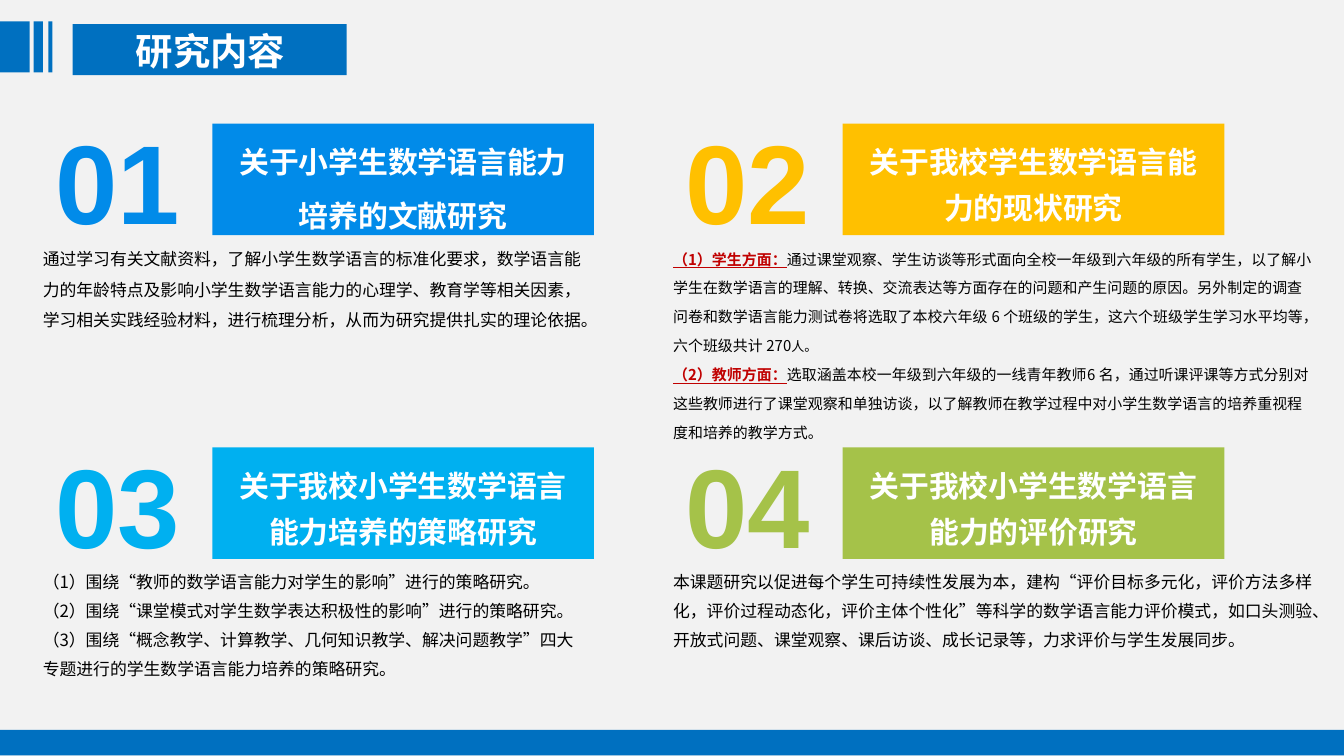
"""Build the slide on the four parts of the research content."""
import dataclasses
import typing

import lxml.etree
import pptx
import pptx.dml.color
import pptx.enum.shapes
import pptx.enum.text
import pptx.oxml.ns
import pptx.util

Inches = pptx.util.Inches
Pt = pptx.util.Pt
Align = pptx.enum.text.PP_ALIGN
Anchor = pptx.enum.text.MSO_ANCHOR

COLOURS = {
    "page": "F2F2F2", "theme": "0070C0", "white": "FFFFFF", "black": "000000",
    "label": "C00000", "blue": "018BE9", "gold": "FFC000", "sky": "00B0F0", "green": "A5C249",
}
CHINESE = "Noto Sans CJK SC"
COLUMNS = (0.22, 4.91)
ROWS = (0.73, 3.14)


@dataclasses.dataclass(frozen=True)
class Area:
    left: float
    top: float
    width: float
    height: float

    def lengths(self) -> tuple:
        return tuple(Inches(n) for n in (self.left, self.top, self.width, self.height))


@dataclasses.dataclass(frozen=True)
class Style:
    size: float
    colour: str = "black"
    bold: bool = False
    underline: bool = False
    font: str = CHINESE


@dataclasses.dataclass(frozen=True)
class Span:
    text: str
    style: Style


@dataclasses.dataclass(frozen=True)
class Topic:
    colour: str
    heading: tuple[str, ...]
    heading_spacing: float
    body: tuple[tuple[Span, ...], ...]
    body_width: float
    body_height: float = 0.97
    body_spacing: typing.Any = Pt(15.5)


BODY = Style(9)
DETAIL = Style(8)
LABEL = Style(8, "label", bold=True, underline=True)
HEADING = Style(16, "white", bold=True)

TOPICS = (
    Topic("blue", ("关于小学生数学语言能力", "培养的文献研究"), 1.5, (
        (Span("通过学习有关文献资料，了解小学生数学语言的标准化要求，数学语言能力的年龄特点及影响小学生数学语言能力的心理学、教育学等相关因素，学习相关实践经验材料，进行梳理分析，从而为研究提供扎实的理论依据。", BODY),),
    ), 4.2, body_spacing=1.5),
    Topic("gold", ("关于我校学生数学语言能力的现状研究",), 1.3, (
        (Span("（1）学生方面：", LABEL),
         Span("通过课堂观察、学生访谈等形式面向全校一年级到六年级的所有学生，以了解小学生在数学语言的理解、转换、交流表达等方面存在的问题和产生问题的原因。另外制定的调查问卷和数学语言能力测试卷将选取了本校六年级 6 个班级的学生，这六个班级学生学习水平均等，六个班级共计 270", DETAIL),
         Span("人。", Style(7))),
        (Span("（2）教师方面：", LABEL),
         Span("选取涵盖本校一年级到六年级的一线青年教师6 名，通过听课评课等方式分别对这些教师进行了课堂观察和单独访谈，以了解教师在教学过程中对小学生数学语言的培养重视程度和培养的教学方式。", DETAIL)),
    ), 4.97, 1.6),
    Topic("sky", ("关于我校小学生数学语言能力培养的策略研究",), 1.3, (
        (Span("（1）围绕“教师的数学语言能力对学生的影响”进行的策略研究。", BODY),),
        (Span("（2）围绕“课堂模式对学生数学表达积极性的影响”进行的策略研究。", BODY),),
        (Span("（3）围绕“概念教学、计算教学、几何知识教学、解决问题教学”四大专题进行的学生数学语言能力培养的策略研究。", BODY),),
    ), 4.2),
    Topic("green", ("关于我校小学生数学语言能力的评价研究",), 1.3, (
        (Span("本课题研究以促进每个学生可持续性发展为本，建构“评价目标多元化，评价方法多样化，评价过程动态化，评价主体个性化”等科学的数学语言能力评价模式，如口头测验、开放式问题、课堂观察、课后访谈、成长记录等，力求评价与学生发展同步。", BODY),),
    ), 4.98),
)


def rgb(colour: str) -> pptx.dml.color.RGBColor:
    return pptx.dml.color.RGBColor.from_string(COLOURS[colour])


def format_run(run, style: Style) -> None:
    font = run.font
    font.name, font.size = style.font, Pt(style.size)
    font.bold, font.underline = style.bold, style.underline
    font.color.rgb = rgb(style.colour)
    lxml.etree.SubElement(font._element, pptx.oxml.ns.qn("a:ea"), typeface=style.font)


def write(box, paragraphs: tuple, align=Align.LEFT, anchor=Anchor.TOP,
          spacing=1.0, inset: tuple[float, float] = (0.1, 0.05)) -> None:
    frame = box.text_frame
    frame.word_wrap = True
    frame.vertical_anchor = anchor
    frame.margin_left = frame.margin_right = Inches(inset[0])
    frame.margin_top = frame.margin_bottom = Inches(inset[1])
    for index, spans in enumerate(paragraphs):
        para = frame.add_paragraph() if index else frame.paragraphs[0]
        para.alignment, para.line_spacing = align, spacing
        for span in spans:
            run = para.add_run()
            run.text = span.text
            format_run(run, span.style)


def add_bar(page, area: Area, colour: str):
    bar = page.shapes.add_shape(pptx.enum.shapes.MSO_SHAPE.RECTANGLE, *area.lengths())
    bar.shadow.inherit = False
    bar.fill.solid()
    bar.fill.fore_color.rgb = rgb(colour)
    bar.line.fill.background()
    return bar


def add_text(page, area: Area, paragraphs: tuple, **layout) -> None:
    write(page.shapes.add_textbox(*area.lengths()), paragraphs, **layout)


def add_topic(page, index: int, topic: Topic) -> None:
    left, top = COLUMNS[index % 2], ROWS[index // 2]
    bar = add_bar(page, Area(left + 1.36, top + 0.19, 2.84, 0.83), topic.colour)
    write(bar, tuple((Span(line, HEADING),) for line in topic.heading),
          align=Align.CENTER, anchor=Anchor.MIDDLE, spacing=topic.heading_spacing)
    number = Span(f"{index + 1:02}", Style(60, topic.colour, bold=True, font="Arial"))
    add_text(page, Area(left, top, 1.31, 1.22), ((number,),),
             align=Align.CENTER, anchor=Anchor.MIDDLE, inset=(0, 0))
    add_text(page, Area(left, top + 1, topic.body_width, topic.body_height),
             topic.body, spacing=topic.body_spacing)


def main() -> None:
    deck = pptx.Presentation()
    deck.slide_width = Inches(10)
    deck.slide_height = deck.slide_width * 9 // 16
    page = deck.slides.add_slide(deck.slide_layouts[6])
    page.background.fill.solid()
    page.background.fill.fore_color.rgb = rgb("page")

    add_bar(page, Area(0.54, 0.18, 2.04, 0.38), "theme")
    add_text(page, Area(0.94, 0.17, 2.02, 0.41),
             ((Span("研究内容", Style(20, "white", bold=True)),),), inset=(0.07, 0.04))
    for left, width in ((0, 0.22), (0.25, 0.07), (0.36, 0.03)):
        add_bar(page, Area(left, 0.16, width, 0.38), "theme")
    add_bar(page, Area(0, 5.43, 10, 0.19), "theme")

    for index, topic in enumerate(TOPICS):
        add_topic(page, index, topic)
    deck.save("out.pptx")


if __name__ == "__main__":
    main()
